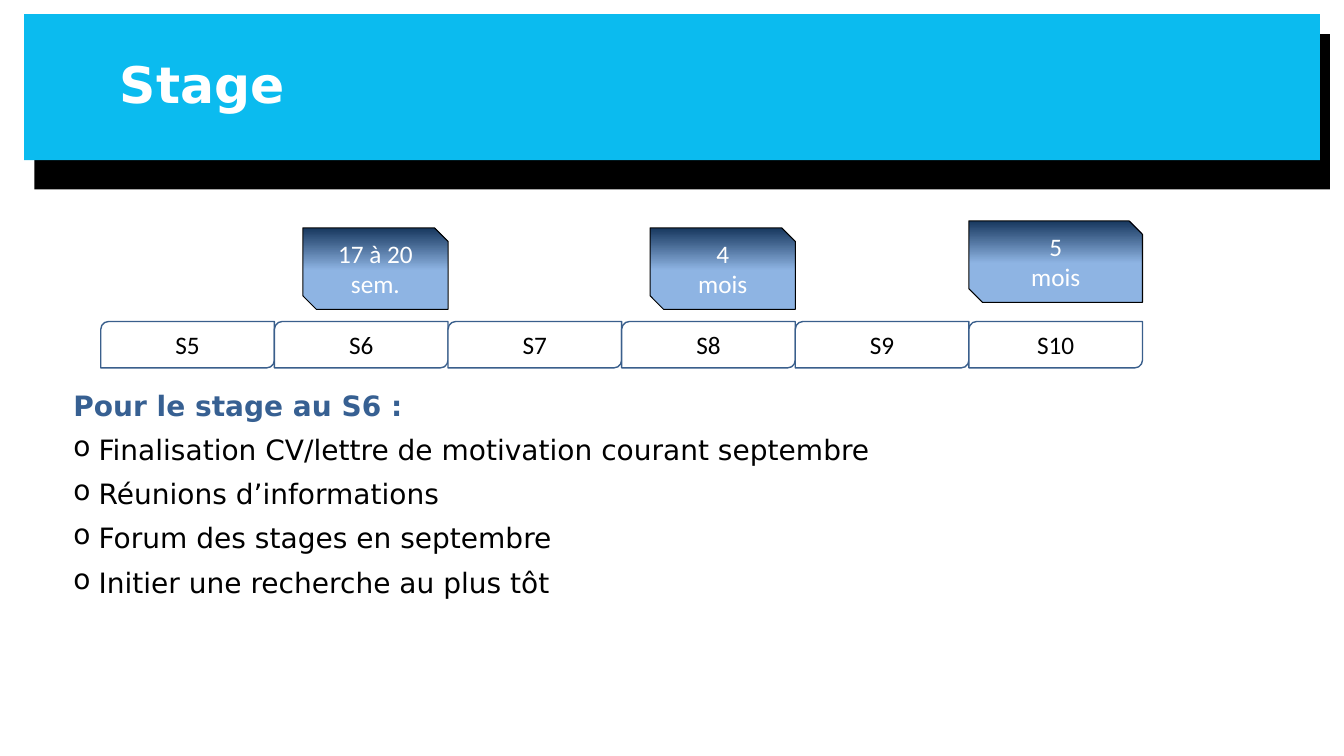
from dataclasses import dataclass

from lxml.etree import SubElement
from pptx import Presentation
from pptx.dml.color import RGBColor
from pptx.enum.shapes import MSO_SHAPE
from pptx.enum.text import MSO_ANCHOR, PP_ALIGN
from pptx.oxml.ns import qn
from pptx.util import Inches, Pt


@dataclass(frozen=True)
class Theme:
    black: str = "000000"
    white: str = "FFFFFF"
    banner: str = "0BBBEF"
    heading: str = "376092"
    outline: str = "3A5F8C"
    gradient: tuple = ((0, "8EB4E3"), (48, "8EB4E3"), (100, "17375E"))
    text_font: str = "DejaVu Sans"
    label_font: str = "Calibri"
    title_size: int = 36
    body_size: int = 20
    label_size: int = 18


theme = Theme()


def add_box(kind, left, top, width, height, fill=None, line=None, line_width=1):
    """Add a shadowless shape; without a fill colour it gets the theme gradient."""
    shape = slide.shapes.add_shape(
        kind, Inches(left), Inches(top), Inches(width), Inches(height))
    shape.shadow.inherit = False
    if fill:
        shape.fill.solid()
        shape.fill.fore_color.rgb = RGBColor.from_string(fill)
    else:
        shape.fill.gradient()
        shape.fill.gradient_angle = 90
        stops = shape._element.spPr.find(qn("a:gradFill")).find(qn("a:gsLst"))
        for stop in list(stops):
            stops.remove(stop)
        for percent, color in theme.gradient:
            stop = SubElement(stops, qn("a:gs"), pos=str(percent * 1000))
            SubElement(stop, qn("a:srgbClr"), val=color)
    if line:
        shape.line.color.rgb = RGBColor.from_string(line)
        shape.line.width = Pt(line_width)
    else:
        shape.line.fill.background()
    shape.text_frame.vertical_anchor = MSO_ANCHOR.MIDDLE
    return shape


def write_line(frame, index, text, font, size, color, bold=False):
    """Write one paragraph of the frame and return it."""
    paragraph = frame.add_paragraph() if index else frame.paragraphs[0]
    run = paragraph.add_run()
    run.text = text
    run.font.name = font
    run.font.size = Pt(size)
    run.font.bold = bold
    run.font.color.rgb = RGBColor.from_string(color)
    return paragraph


presentation = Presentation()
presentation.slide_width = Inches(13.33)
presentation.slide_height = Inches(7.5)
slide = presentation.slides.add_slide(presentation.slide_layouts[6])

# Banner and title
add_box(MSO_SHAPE.RECTANGLE, 0.34, 0.34, 12.85, 1.54, theme.black)
add_box(MSO_SHAPE.RECTANGLE, 0.24, 0.14, 12.85, 1.45, theme.banner)
title = slide.shapes.add_textbox(Inches(0.92), Inches(0.14), Inches(11.5), Inches(1.45))
title.text_frame.word_wrap = True
title.text_frame.vertical_anchor = MSO_ANCHOR.MIDDLE
title.text_frame.margin_left = Inches(0.27)
title_line = write_line(title.text_frame, 0, "Stage", theme.text_font,
                        theme.title_size, theme.white, True)
title_line.line_spacing = 0.9

# Advice for the first internship
advice = slide.shapes.add_textbox(Inches(0.63), Inches(3.84), Inches(11.64), Inches(2.96))
advice.text_frame.word_wrap = True
heading = write_line(advice.text_frame, 0, "Pour le stage au S6 :", theme.text_font,
                     theme.body_size, theme.heading, True)
heading.line_spacing = 0.9
steps = [
    "Finalisation CV/lettre de motivation courant septembre",
    "Réunions d’informations",
    "Forum des stages en septembre",
    "Initier une recherche au plus tôt",
]
for index, step in enumerate(steps, start=1):
    paragraph = write_line(advice.text_frame, index, step, theme.text_font,
                           theme.body_size, theme.black)
    paragraph.line_spacing = 0.9
    paragraph.space_before = Pt(10)
    properties = paragraph._p.get_or_add_pPr()
    properties.set("marL", str(Inches(0.25)))
    properties.set("indent", str(-Inches(0.25)))
    SubElement(properties, qn("a:buChar"), char="o")

# Semester timeline
timeline_left, semester_width = 1, 1.722
semesters = ["S5", "S6", "S7", "S8", "S9", "S10"]
for index, semester in enumerate(semesters):
    box = add_box(MSO_SHAPE.ROUND_2_DIAG_RECTANGLE, timeline_left + index * semester_width,
                  3.19, semester_width, 0.46, theme.white, theme.outline)
    paragraph = write_line(box.text_frame, 0, semester, theme.label_font,
                           theme.label_size, theme.black)
    paragraph.alignment = PP_ALIGN.CENTER

# Internship durations, each flush with the right edge of its semester
internships = [
    ("S6", 2.26, 1.44, ("17 à 20", "sem.")),
    ("S8", 2.26, 1.44, ("4", "mois")),
    ("S10", 2.19, semester_width, ("5", "mois")),
]
for semester, top, width, duration in internships:
    right = timeline_left + (semesters.index(semester) + 1) * semester_width
    box = add_box(MSO_SHAPE.SNIP_2_DIAG_RECTANGLE, right - width, top, width, 0.81,
                  line=theme.black, line_width=0.75)
    for index, text in enumerate(duration):
        paragraph = write_line(box.text_frame, index, text, theme.label_font,
                               theme.label_size, theme.white)
        paragraph.alignment = PP_ALIGN.CENTER

presentation.save("out.pptx")
